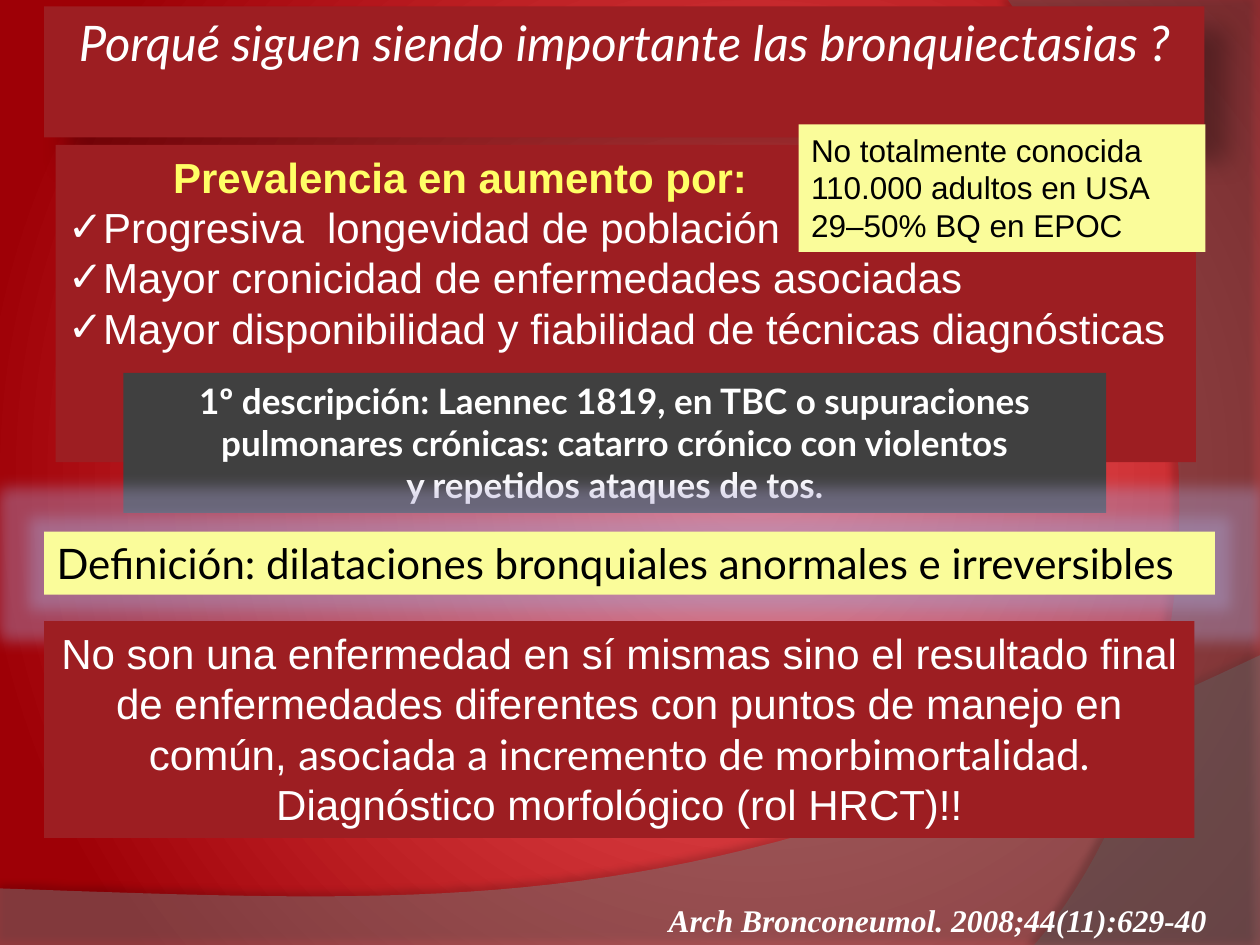
from lxml.etree import SubElement
from pptx import Presentation
from pptx.dml.color import RGBColor
from pptx.enum.dml import MSO_FILL
from pptx.enum.text import MSO_ANCHOR, PP_ALIGN
from pptx.oxml.ns import qn
from pptx.util import Cm, Pt

COLORS = {
    "red": "9D1E22", "dark": "404040", "cream": "FAFC9A", "yellow": "FFFF66",
    "white": "FFFFFF", "black": "000000", "center": "FF6466", "edge": "9E0006",
    "wave": "7F7F7F", "side": "5E5E5E", "glow": "A8A0D0",
}
ARIAL = {"name": "Arial", "size": Pt(24), "color": "white"}
LATO = {**ARIAL, "name": "Lato"}
TITLE = {**LATO, "size": Pt(28), "italic": True, "bold": False}
HEADING = {**ARIAL, "color": "yellow", "bold": True}
HISTORY = {**LATO, "size": Pt(20), "bold": True}
DEFINITION = {**LATO, "color": "black"}
DATA = {**ARIAL, "size": Pt(18), "color": "black"}
CITATION = {"name": "Times New Roman", "size": Pt(18), "color": "white",
            "bold": True, "italic": True}


def rgb(name):
    return RGBColor.from_string(COLORS[name])


def bezier(p0, p1, p2, p3, n=40):
    ts = [i / n for i in range(n + 1)]
    return [tuple((1 - t) ** 3 * a + 3 * t * (1 - t) ** 2 * b
                  + 3 * t * t * (1 - t) * c + t ** 3 * d
                  for a, b, c, d in zip(p0, p1, p2, p3)) for t in ts]


class Deck:
    """Holds the style and the current slide."""

    def __init__(self):
        self.prs = Presentation()
        self.prs.slide_width, self.prs.slide_height = Cm(25.4), Cm(19.05)
        self.s = self.prs.slides.add_slide(self.prs.slide_layouts[5])

    def background(self):
        fill = self.s.background.fill
        fill.gradient()
        for stop, name in zip(fill.gradient_stops, ("center", "edge")):
            stop.color.rgb = rgb(name)
        grad = next(self.s.element.iter(qn("a:gradFill")))
        grad.remove(grad.find(qn("a:lin")))
        circle = SubElement(grad, qn("a:path"), path="circle")
        SubElement(circle, qn("a:fillToRect"), l="60000", t="50000", r="40000", b="50000")

    def effect(self, sp, tag, color, alpha, **attrs):
        sp.shadow.inherit = False
        lst = sp._element.spPr.find(qn("a:effectLst"))
        node = SubElement(lst, qn(tag), {k: str(int(v)) for k, v in attrs.items()})
        clr = SubElement(node, qn("a:srgbClr"), val=COLORS[color])
        SubElement(clr, qn("a:alpha"), val=str(alpha * 1000))

    def shadow(self, sp, alpha, blur, dist, angle):
        self.effect(sp, "a:outerShdw", "black", alpha, blurRad=Pt(blur),
                    dist=Pt(dist), dir=angle * 60000)

    def swoosh(self, points, color, alpha):
        pts = [(Cm(x), Cm(y)) for x, y in points]
        fb = self.s.shapes.build_freeform(*pts[0])
        fb.add_line_segments(pts[1:], close=True)
        sp = fb.convert_to_shape()
        self.paint(sp, color)
        clr = next(sp._element.spPr.iter(qn("a:srgbClr")))
        SubElement(clr, qn("a:alpha"), val=str(alpha * 1000))
        return sp

    def paint(self, sp, color):
        sp.shadow.inherit = False
        sp.fill.solid()
        sp.fill.fore_color.rgb = rgb(color)
        sp.line.fill.background()

    def text(self, sp, paragraphs, align, wrap=True):
        tf = sp.text_frame
        tf.word_wrap = wrap
        tf.vertical_anchor = MSO_ANCHOR.TOP
        for i, runs in enumerate(paragraphs):
            p = tf.paragraphs[0] if i == 0 else tf.add_paragraph()
            p.alignment = align
            for text, style in runs:
                r = p.add_run()
                r.text = text
                for key, value in style.items():
                    if key == "color":
                        r.font.color.rgb = rgb(value)
                    else:
                        setattr(r.font, key, value)
        return sp

    def title(self, box, text, fill):
        sp = self.s.shapes.title
        sp.left, sp.top, sp.width, sp.height = (Cm(v) for v in box)
        self.s.shapes._spTree.append(sp._element)
        self.paint(sp, fill)
        return self.text(sp, [[(text, TITLE)]], PP_ALIGN.CENTER)

    def panel(self, box, paragraphs, fill=None, align=PP_ALIGN.LEFT, wrap=True):
        sp = self.s.shapes.add_textbox(*(Cm(v) for v in box))
        if fill:
            self.paint(sp, fill)
        return self.text(sp, paragraphs, align, wrap)

    def indent(self, p, left, bullet=None):
        pPr = p._p.get_or_add_pPr()
        pPr.set("marL", str(Cm(left)))
        if bullet:
            pPr.set("indent", str(-Cm(left)))
            SubElement(pPr, qn("a:buFont"), typeface="Arial")
            SubElement(pPr, qn("a:buChar"), char=bullet)


def main():
    deck = Deck()
    deck.background()
    wave = deck.swoosh(
        [(0, 19.05), (25.4, 19.05)]
        + bezier((25.4, 13.21), (14.2, 18.52), (9.93, 18.26), (0, 17.91)), "wave", 45)
    deck.shadow(wave, 35, 4, 3.5, 270)
    side = deck.swoosh(
        [(25.4, 0), (25.4, 19.05)]
        + bezier((20.85, 19.05), (23.75, 15.72), (25.86, 7.62), (20.32, 0)), "side", 40)
    deck.shadow(side, 45, 4, 4, 180)

    title = deck.title((0.89, 0.13, 23.39, 2.64),
                       "Porqué siguen siendo importante las bronquiectasias ?", "red")
    deck.shadow(title, 30, 15, 18, 45)

    causes = ["Progresiva  longevidad de población",
              "Mayor cronicidad de enfermedades asociadas",
              "Mayor disponibilidad y fiabilidad de técnicas diagnósticas"]
    sp = deck.panel((1.12, 2.92, 22.99, 6.4),
                    [[("Prevalencia en aumento por:", HEADING)]]
                    + [[(cause, ARIAL)] for cause in causes], "red")
    heading, *items = sp.text_frame.paragraphs
    deck.indent(heading, 2.12)
    for p in items:
        deck.indent(p, 0.7, "✓")

    history = ["1º descripción: Laennec 1819, en TBC o supuraciones",
               "pulmonares crónicas: catarro crónico con violentos",
               "y repetidos ataques de tos."]
    deck.panel((2.49, 7.52, 19.81, 2.82), [[(line, HISTORY)] for line in history],
               "dark", PP_ALIGN.CENTER)

    definition = "Definición: dilataciones bronquiales anormales e irreversibles"
    sp = deck.panel((0.89, 10.72, 23.6, 1.27), [[(definition, DEFINITION)]], "cream")
    deck.effect(sp, "a:glow", "glow", 40, rad=Pt(18))

    deck.panel((0.89, 12.52, 23.19, 4.37), [
        [("No son una enfermedad en sí mismas sino el resultado final de enfermedades "
          "diferentes con puntos de manejo en común, ", ARIAL),
         ("asociada a incremento de morbimortalidad.", LATO)],
        [("Diagnóstico morfológico (rol HRCT)!!", ARIAL)],
    ], "red", PP_ALIGN.CENTER)

    deck.panel((13.23, 18.03, 11.46, 1.02),
               [[("Arch Bronconeumol. 2008;44(11):629-40", CITATION)]], wrap=False)

    data = ["No totalmente conocida", "110.000 adultos en USA", "29–50% BQ en EPOC"]
    deck.panel((16.1, 2.51, 8.2, 2.57), [[(line, DATA)] for line in data], "cream")
    deck.prs.save("out.pptx")


if __name__ == "__main__":
    main()
